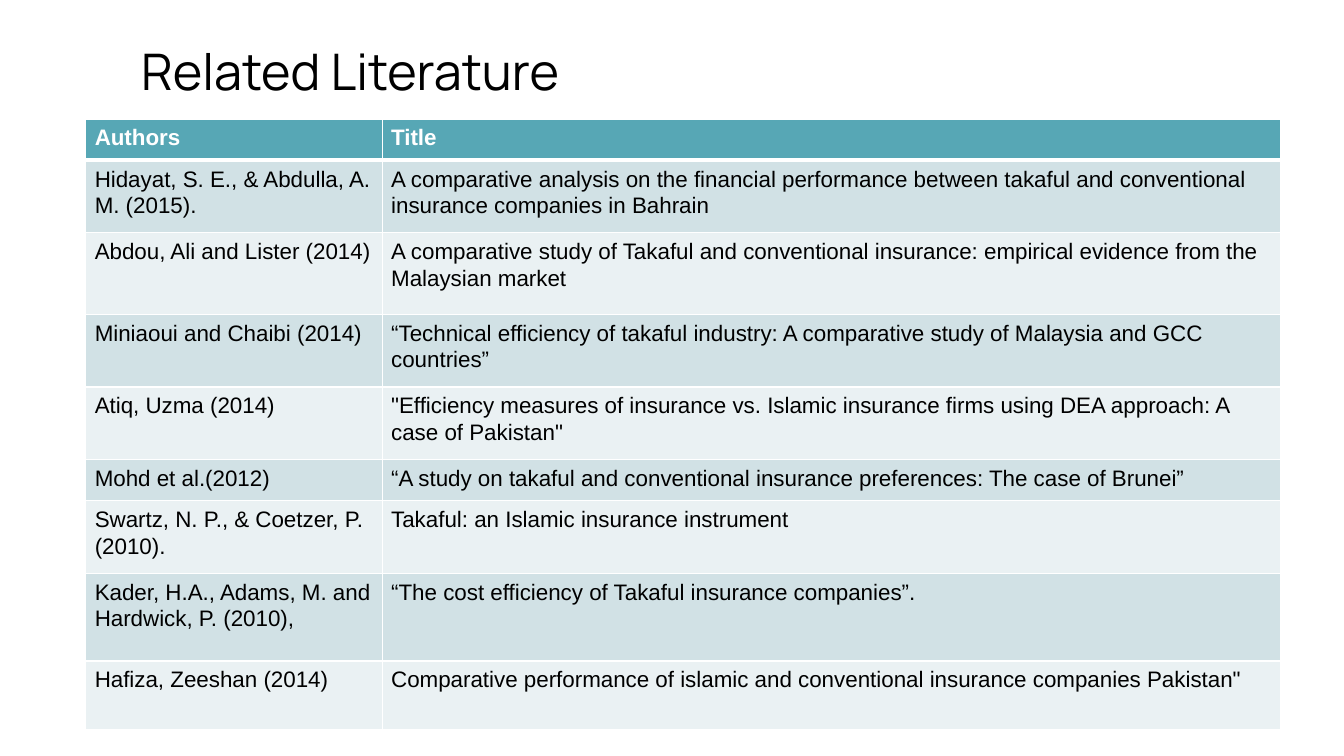
from pptx import Presentation
from pptx.dml.color import RGBColor as RGB
from pptx.enum.text import MSO_ANCHOR as Anchor, PP_ALIGN as Align
from pptx.oxml import parse_xml
from pptx.oxml.ns import nsdecls
from pptx.util import Inches, Pt

BOOKS = [
    ("Authors", "Title", 0.41),
    ("Hidayat, S. E., & Abdulla, A. M. (2015).",
     "A comparative analysis on the financial performance between takaful "
     "and conventional insurance companies in Bahrain", 0.72),
    ("Abdou, Ali and Lister (2014)",
     "A comparative study of Takaful and conventional insurance: "
     "empirical evidence from the Malaysian market", 0.81),
    ("Miniaoui and Chaibi (2014)",
     "“Technical efficiency of takaful industry: "
     "A comparative study of Malaysia and GCC countries”", 0.72),
    ("Atiq, Uzma (2014)",
     '"Efficiency measures of insurance vs. Islamic insurance firms '
     'using DEA approach: A case of Pakistan"', 0.72),
    ("Mohd et al.(2012)",
     "“A study on takaful and conventional insurance preferences: "
     "The case of Brunei”", 0.41),
    ("Swartz, N. P., & Coetzer, P. (2010).",
     "Takaful: an Islamic insurance instrument", 0.72),
    ("Kader, H.A., Adams, M. and Hardwick, P. (2010),",
     "“The cost efficiency of Takaful insurance companies”.", 0.87),
    ("Hafiza, Zeeshan (2014)",
     "Comparative performance of islamic and conventional "
     'insurance companies Pakistan"', 0.68),
]
WIDTHS = [2.94, 8.91]


def style(par, face, size, color, bold=False):
    for run in par.runs:
        font = run.font
        font.name, font.size, font.bold = face, Pt(size), bold
        font.color.rgb = RGB.from_string(color)


def edge(cell, side, width):
    """Draw a white border on one side (L, R, T or B) of a cell."""
    cell._tc.get_or_add_tcPr().append(parse_xml(
        f'<a:ln{side} {nsdecls("a")} w="{Pt(width)}"><a:solidFill>'
        f'<a:srgbClr val="FFFFFF"/></a:solidFill></a:ln{side}>'))


prs = Presentation()
prs.slide_width, prs.slide_height = Inches(13.33), Inches(7.5)
slide = prs.slides.add_slide(prs.slide_layouts[5])

title = slide.shapes.title
title.left, title.top = Inches(1.3), Inches(0.3)
title.width, title.height = Inches(9.42), Inches(0.8)
frame = title.text_frame
frame.text = "Related Literature"
frame.vertical_anchor = Anchor.BOTTOM
frame.margin_left = frame.margin_right = Inches(0.1)
frame.margin_top = frame.margin_bottom = Inches(0.1)
frame.paragraphs[0].alignment = Align.LEFT
style(frame.paragraphs[0], "Manrope", 36, "000000")

table = slide.shapes.add_table(
    len(BOOKS), len(WIDTHS), Inches(0.85), Inches(1.18),
    Inches(sum(WIDTHS)), Inches(sum(book[2] for book in BOOKS))).table
for col, width in zip(table.columns, WIDTHS):
    col.width = Inches(width)

for row, (*texts, height) in enumerate(BOOKS):
    table.rows[row].height = Inches(height)
    head = row == 0
    fill = "57A7B5" if head else "D1E1E5" if row % 2 else "EAF1F3"
    for col, text in enumerate(texts):
        cell = table.cell(row, col)
        cell.margin_left = cell.margin_right = Inches(0.09)
        cell.margin_top = cell.margin_bottom = Inches(0.05)
        for side in "LRTB":
            thick = head and side == "B" or row == 1 and side == "T"
            edge(cell, side, 3 if thick else 1)
        cell.fill.solid()
        cell.fill.fore_color.rgb = RGB.from_string(fill)
        cell.text_frame.text = text
        par = cell.text_frame.paragraphs[0]
        par.line_spacing, par.space_after = 1.07, Pt(8)
        style(par, "Arial", 16, "FFFFFF" if head else "000000", head)

prs.save("out.pptx")
